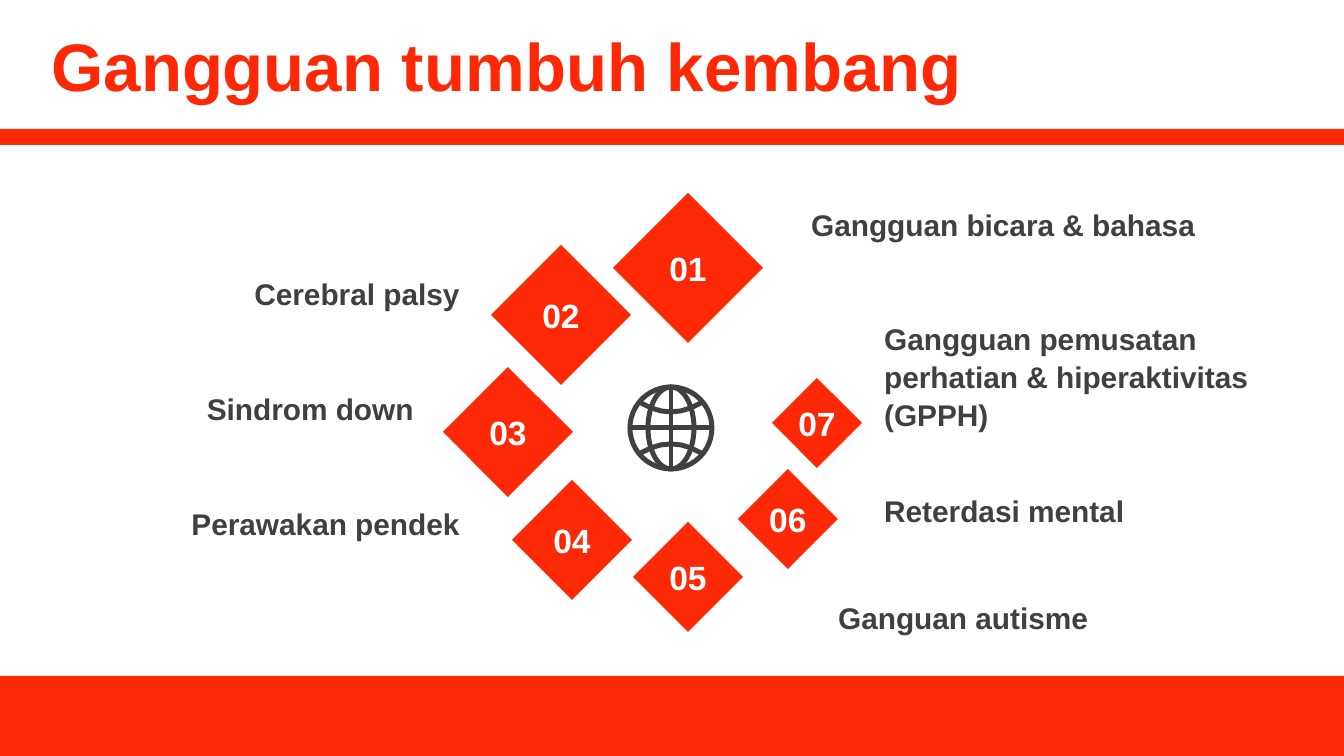
"""Build a slide on growth and development disorders around a ring of diamonds."""
from lxml import etree
from pptx import Presentation
from pptx.dml.color import RGBColor
from pptx.enum.shapes import MSO_CONNECTOR, MSO_SHAPE
from pptx.enum.text import MSO_ANCHOR, MSO_AUTO_SIZE, PP_ALIGN
from pptx.oxml.ns import qn
from pptx.util import Pt

RECTANGLE, DIAMOND, OVAL = MSO_SHAPE.RECTANGLE, MSO_SHAPE.DIAMOND, MSO_SHAPE.OVAL
STRAIGHT = MSO_CONNECTOR.STRAIGHT
MIDDLE, TOP = MSO_ANCHOR.MIDDLE, MSO_ANCHOR.TOP
LEFT, CENTER, RIGHT = PP_ALIGN.LEFT, PP_ALIGN.CENTER, PP_ALIGN.RIGHT
NO_FIT = MSO_AUTO_SIZE.NONE
PX = 914400 / 134.4

THEME = {
    "font": "Arial",
    "red": RGBColor(0xFD, 0x29, 0x06),
    "dark": RGBColor(0x40, 0x40, 0x40),
    "white": RGBColor(0xFF, 0xFF, 0xFF),
    "title": 36,
    "number": 18,
    "label": 16,
}

TITLE = "Gangguan tumbuh kembang"
TITLE_PLACE = (38, 0, 1306, 130)
BANDS = [(0, 129, 1344, 16), (0, 676, 1344, 80)]
DIAMONDS = [
    (688, 268, 150),
    (561, 315, 140),
    (508, 432, 130),
    (572, 540, 120),
    (688, 577, 110),
    (788, 519, 100),
    (817, 423, 90),
]
LABELS = [
    ("Gangguan bicara & bahasa", (798, 198, 430, 50), LEFT),
    ("Cerebral palsy", (43, 267, 430, 50), RIGHT),
    ("Sindrom down", (43, 382, 384, 50), RIGHT),
    ("Perawakan pendek", (43, 497, 430, 50), RIGHT),
    ("Ganguan autisme", (825, 591, 430, 50), LEFT),
    ("Reterdasi mental", (871, 484, 430, 50), LEFT),
    ("Gangguan pemusatan perhatian & hiperaktivitas (GPPH)", (871, 312, 430, 122), LEFT),
]
GLOBE = {"x": 671, "y": 428, "radius": 41, "meridian": 23, "line": 5}
PARALLEL = [(-30, 25), (-20, 20), (-10, 17), (0, 16), (10, 17), (20, 20), (30, 25)]


def emu(*lengths):
    return [round(length * PX) for length in lengths]


def write(shape, text, size, color, align, anchor, wrap=True, spacing=1.0):
    frame = shape.text_frame
    frame.text = text
    frame.auto_size = NO_FIT
    frame.word_wrap, frame.vertical_anchor = wrap, anchor
    para = frame.paragraphs[0]
    para.alignment, para.line_spacing = align, spacing
    style = {"name": THEME["font"], "size": Pt(size), "bold": True}
    for name, value in style.items():
        setattr(para.font, name, value)
    para.font.color.rgb = color


def paint(shape, color):
    shape.shadow.inherit = False
    shape.fill.solid()
    shape.fill.fore_color.rgb = color
    shape.line.fill.background()
    return shape


def stroke(line):
    line.color.rgb = THEME["dark"]
    line.width = emu(GLOBE["line"])[0]


def outline(shape):
    shape.shadow.inherit = False
    shape.fill.background()
    stroke(shape.line)


def draw_globe(page):
    x, y, radius = GLOBE["x"], GLOBE["y"], GLOBE["radius"]
    for half_width in (radius, GLOBE["meridian"]):
        place = emu(x - half_width, y - radius, 2 * half_width, 2 * radius)
        outline(page.shapes.add_shape(OVAL, *place))
    for across, down in ((radius, 0), (0, radius)):
        ends = emu(x - across, y - down, x + across, y + down)
        axis = page.shapes.add_connector(STRAIGHT, *ends)
        stroke(axis.line)
        etree.SubElement(axis._element.spPr, qn("a:effectLst"))
    for side in (-1, 1):
        points = [emu(x + across, y + side * down) for across, down in PARALLEL]
        builder = page.shapes.build_freeform(*points[0], scale=1.0)
        builder.add_line_segments(points[1:], close=False)
        outline(builder.convert_to_shape())


def main():
    deck = Presentation()
    deck.slide_width, deck.slide_height = emu(1344, 756)
    page = deck.slides.add_slide(deck.slide_layouts[5])

    title = page.shapes.title
    title.left, title.top, title.width, title.height = emu(*TITLE_PLACE)
    write(title, TITLE, THEME["title"], THEME["red"], LEFT, MIDDLE)

    for place in BANDS:
        paint(page.shapes.add_shape(RECTANGLE, *emu(*place)), THEME["red"])

    for number, (x, y, size) in enumerate(DIAMONDS, 1):
        place = emu(x - size / 2, y - size / 2, size, size)
        diamond = paint(page.shapes.add_shape(DIAMOND, *place), THEME["red"])
        write(diamond, f"{number:02}", THEME["number"], THEME["white"], CENTER, MIDDLE, wrap=False)

    for text, place, align in LABELS:
        box = page.shapes.add_textbox(*emu(*place))
        write(box, text, THEME["label"], THEME["dark"], align, TOP, spacing=1.06)

    draw_globe(page)
    deck.save("out.pptx")


if __name__ == "__main__":
    main()
